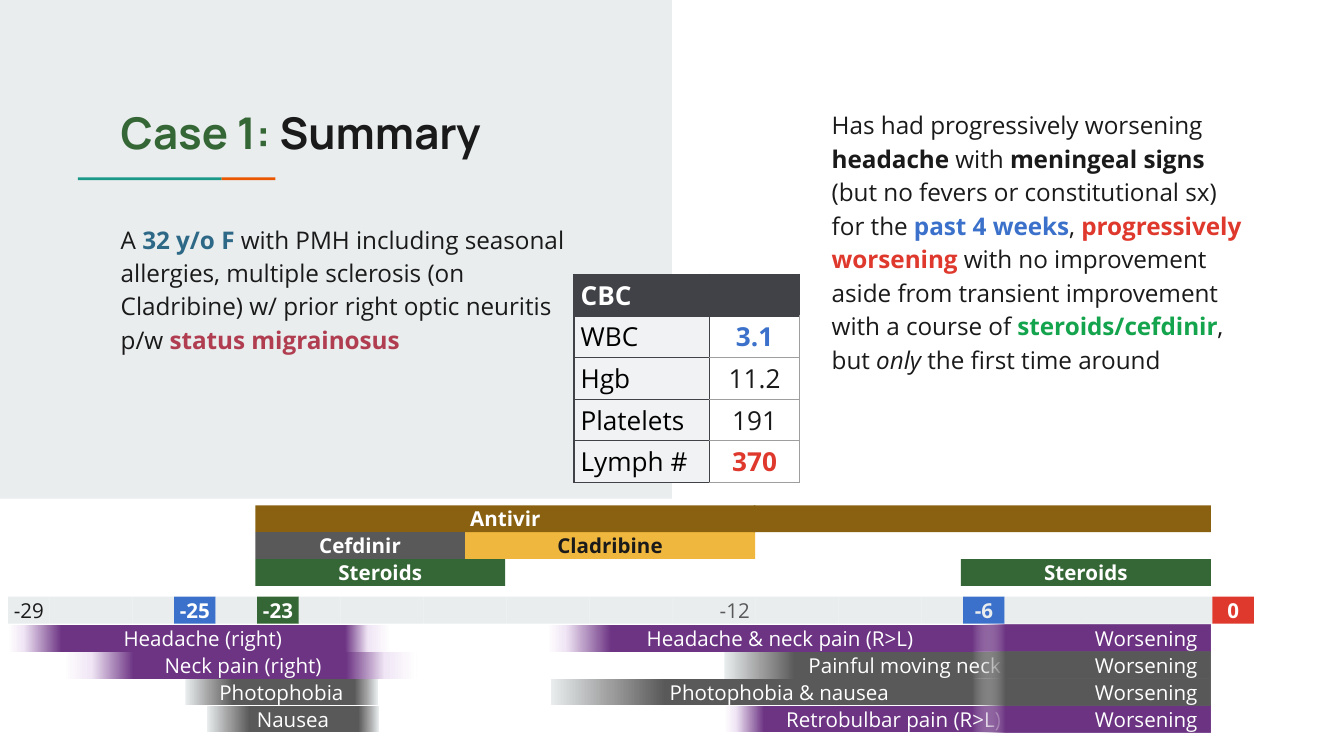
from dataclasses import dataclass
from typing import Optional

from lxml import etree
from pptx import Presentation
from pptx.dml.color import RGBColor
from pptx.enum import shapes, text
from pptx.oxml import ns
from pptx.util import Inches, Pt

WHITE = RGBColor(0xFF, 0xFF, 0xFF)
BLACK = RGBColor(0, 0, 0)
INK = RGBColor(0x1A, 0x1A, 0x1A)
MIST = RGBColor(0xE9, 0xED, 0xEE)
PALE = RGBColor(0xF1, 0xF2, 0xF3)
SLATE = RGBColor(0x40, 0x42, 0x47)
GRAY = RGBColor(0x59, 0x59, 0x59)
SILVER = RGBColor(0x9E, 0x9E, 0x9E)
LILAC = RGBColor(0xF0, 0xE6, 0xF5)
PURPLE = RGBColor(0x6C, 0x34, 0x83)
GREEN = RGBColor(0x35, 0x66, 0x35)
LIME = RGBColor(0x14, 0xA4, 0x4D)
BLUE = RGBColor(0x3B, 0x71, 0xCA)
STEEL = RGBColor(0x2D, 0x69, 0x87)
RED = RGBColor(0xDF, 0x38, 0x2C)
ROSE = RGBColor(0xB0, 0x3D, 0x50)
BROWN = RGBColor(0x89, 0x61, 0x10)
GOLD = RGBColor(0xEF, 0xB7, 0x3E)
TEAL = RGBColor(0x1A, 0x99, 0x88)
ORANGE = RGBColor(0xEB, 0x56, 0x00)

SANS = "Open Sans"
LEFT, MID, RIGHT = text.PP_ALIGN.LEFT, text.PP_ALIGN.CENTER, text.PP_ALIGN.RIGHT
WIDE = 10
TALL = WIDE * 9 / 16
ROW = 0.2
START, ZERO = 0.06, 9.02
DAY = (ZERO - START) / 29

# Gradient stops: (percent, colour), with None for a clear stop
P_IN = [(0, WHITE), (4, LILAC), (14, PURPLE), (100, PURPLE)]
P_BOTH = P_IN[:3] + [(88, PURPLE), (94, LILAC), (100, WHITE)]
P_SOFT = [(0, WHITE), (8, LILAC), (20, PURPLE), (80, PURPLE), (91, LILAC), (100, WHITE)]
P_CLEAR = [(0, None), (14, PURPLE), (100, PURPLE)]
G_IN = [(0, MIST), (13, SILVER), (25, GRAY), (100, GRAY)]
G_BOTH = G_IN[:3] + [(88, GRAY), (94, SILVER), (100, MIST)]
G_CLEAR = [(0, None), (14, GRAY), (100, GRAY)]


@dataclass
class Run:
    text: str
    color: RGBColor = INK
    bold: bool = False
    italic: bool = False


@dataclass
class Bar:
    x: float
    y: float
    w: float
    fill: object
    label: Optional[Run] = None
    align: object = MID
    pad: tuple = (0, 0)


def write(frame, runs: list, size=11, font=SANS, align=LEFT, line=None, after=None):
    para = frame.paragraphs[0]
    para.alignment = align
    if line:
        para.line_spacing = line
    if after:
        para.space_after = Pt(after)
    for item in runs:
        run = para.add_run()
        run.text = item.text
        face = run.font
        face.name, face.size = font, Pt(size)
        face.bold, face.italic = item.bold, item.italic
        face.color.rgb = item.color


def fade(shape, stops: list):
    """Fill from left to right with the given stops."""
    shape.fill.gradient()
    shape.fill.gradient_angle = 0
    root = shape.element.spPr.find(ns.qn("a:gradFill")).find(ns.qn("a:gsLst"))
    for old in list(root):
        root.remove(old)
    for pos, color in stops:
        stop = etree.SubElement(root, ns.qn("a:gs"), pos=str(pos * 1000))
        tint = etree.SubElement(stop, ns.qn("a:srgbClr"), val=str(color or WHITE))
        if color is None:
            etree.SubElement(tint, ns.qn("a:alpha"), val="0")


def block(slide, x: float, y: float, w: float, h: float, fill):
    shape = slide.shapes.add_shape(
        shapes.MSO_SHAPE.RECTANGLE, Inches(x), Inches(y), Inches(w), Inches(h))
    shape.shadow.inherit = False
    shape.line.fill.background()
    if isinstance(fill, list):
        fade(shape, fill)
    else:
        shape.fill.solid()
        shape.fill.fore_color.rgb = fill
    return shape


def draw(slide, bar: Bar):
    shape = block(slide, bar.x, bar.y, bar.w, ROW, bar.fill)
    if bar.label:
        frame = shape.text_frame
        frame.margin_left, frame.margin_right = map(Inches, bar.pad)
        frame.margin_top = frame.margin_bottom = 0
        frame.vertical_anchor = text.MSO_ANCHOR.MIDDLE
        write(frame, [bar.label], align=bar.align)


def note(slide, x: float, y: float, w: float, h: float, runs: list, **form):
    frame = slide.shapes.add_textbox(
        Inches(x), Inches(y), Inches(w), Inches(h)).text_frame
    frame.word_wrap = True
    frame.margin_left = frame.margin_right = Inches(0.1)
    frame.margin_top = frame.margin_bottom = Inches(0.1)
    write(frame, runs, **form)


def edge(cell, **sides):
    """Set cell borders; each side (L, R, T, B) is a colour and a width."""
    props = cell._tc.get_or_add_tcPr()
    for spot, side in enumerate("LRTB"):
        color, width = sides[side]
        line = etree.Element(ns.qn(f"a:ln{side}"), w=str(Pt(width)))
        fill = etree.SubElement(line, ns.qn("a:solidFill"))
        etree.SubElement(fill, ns.qn("a:srgbClr"), val=str(color))
        props.insert(spot, line)


def counts(slide):
    """Draw the blood count table."""
    rows = [(Run("CBC", WHITE, True), None),
            (Run("WBC", BLACK), Run("3.1", BLUE, True)),
            (Run("Hgb", BLACK), Run("11.2")),
            (Run("Platelets", BLACK), Run("191")),
            (Run("Lymph #", BLACK), Run("370", RED, True))]
    grid = slide.shapes.add_table(
        5, 2, Inches(4.27), Inches(2.04), Inches(1.68), Inches(1.55)).table
    grid.first_row = grid.horz_banding = False
    for col, wide in zip(grid.columns, (1.01, 0.67)):
        col.width = Inches(wide)
    for r, row in enumerate(rows):
        grid.rows[r].height = Inches(0.31)
        for c, item in enumerate(row):
            cell = grid.cell(r, c)
            cell.margin_left = Inches(0 if c else 0.05)
            cell.margin_right = cell.margin_top = cell.margin_bottom = 0
            cell.vertical_anchor = text.MSO_ANCHOR.MIDDLE
            if c and r:
                cell.fill.background()
            else:
                cell.fill.solid()
                cell.fill.fore_color.rgb = PALE if r else SLATE
            if item:
                write(cell.text_frame, [item], size=14, align=MID if c else LEFT)
            else:
                para = cell.text_frame.paragraphs[0]._p
                etree.SubElement(para, ns.qn("a:endParaRPr"), sz="1400")
            tone = SILVER if c and r else SLATE
            edge(cell, L=(SLATE, 0.75), R=(tone, 0.75),
                 T=(SLATE, 1.5) if r == 1 else (tone, 0.75),
                 B=(tone, 0.75 if r else 1.5))


def days(slide):
    """Draw the day scale from -29 to 0."""
    marks = {-29: (MIST, INK, False), -25: (BLUE, WHITE, True),
             -23: (GREEN, WHITE, True), -12: (MIST, GRAY, False),
             -6: (BLUE, MIST, True), 0: (RED, WHITE, True)}
    for day in range(-29, 1):
        fill, color, bold = marks.get(day, (MIST, None, False))
        label = Run(str(day), color, bold) if color else None
        draw(slide, Bar(ZERO + day * DAY, 4.44, 0.31, fill, label))


def main():
    deck = Presentation()
    deck.slide_width, deck.slide_height = Inches(WIDE), Inches(TALL)
    slide = deck.slides.add_slide(deck.slide_layouts[6])
    block(slide, 0, 0, WIDE / 2, TALL, MIST)
    block(slide, 0.58, 1.32, 1.07, 0.02, TEAL)
    block(slide, 1.65, 1.32, 0.4, 0.02, ORANGE)
    block(slide, 0, 3.71, WIDE, 1.93, WHITE)
    note(slide, 0.8, 1.54, 3.69, 1.74, [
        Run("A "), Run("32 y/o F ", STEEL, True),
        Run("with PMH including seasonal allergies, multiple sclerosis "
            "(on Cladribine) w/ prior right optic neuritis p/w "),
        Run("status migrainosus", ROSE, True)], size=13, line=1.15)
    note(slide, 0.8, 0.69, 4.12, 0.59,
         [Run("Case 1:", GREEN, True), Run(" Summary", INK, True)],
         size=23.4, font="Manrope")
    days(slide)
    y1, y2, y3, y4 = (4.65 + ROW * i for i in range(4))
    bars = [
        Bar(5.39, y4, 2.11, P_IN, Run("Retrobulbar pain (R>L)", WHITE), RIGHT, (0.05, 0.05)),
        Bar(5.39, y2, 2.11, G_IN, Run("Painful moving neck", WHITE), RIGHT, (0, 0.05)),
        Bar(3.46, 3.96, 2.16, GOLD, Run("Cladribine", INK, True)),
        Bar(5.61, 3.76, 3.4, BROWN),
        Bar(1.9, 3.76, 3.72, BROWN, Run("Antivir", WHITE, True)),
        Bar(4.07, y1, 3.42, P_IN, Run("Headache & neck pain (R>L)", WHITE), pad=(0.05, 0)),
        Bar(4.1, y3, 3.4, G_IN, Run("Photophobia & nausea", WHITE)),
        Bar(0.06, y1, 2.85, P_BOTH, Run("Headache (right)", WHITE), pad=(0.05, 0)),
        Bar(0.47, y2, 2.63, P_SOFT, Run("Neck pain (right)", WHITE), pad=(0.05, 0)),
        Bar(1.38, y3, 1.43, G_BOTH, Run("Photophobia", WHITE)),
        Bar(1.54, y4, 1.28, G_BOTH, Run("Nausea", WHITE)),
        Bar(1.9, 3.96, 1.56, GRAY, Run("Cefdinir", WHITE, True))]
    bars += [Bar(x, 4.16, 1.86, GREEN, Run("Steroids", WHITE, True)) for x in (1.9, 7.15)]
    bars += [Bar(7.24, y, 1.77, fill, Run("Worsening", WHITE), RIGHT, (0.05, 0.1))
             for y, fill in ((y1, P_CLEAR), (y4, P_CLEAR), (y2, G_CLEAR), (y3, G_CLEAR))]
    for bar in bars:
        draw(slide, bar)
    note(slide, 6.09, 0.69, 3.28, 2.18, [
        Run("Has had progressively worsening "), Run("headache ", bold=True),
        Run("with "), Run("meningeal signs", bold=True),
        Run(" (but no fevers or constitutional sx) for the "),
        Run("past 4 weeks", BLUE, True), Run(", "),
        Run("progressively worsening", RED, True),
        Run(" with no improvement aside from transient improvement with a course of "),
        Run("steroids/cefdinir", LIME, True), Run(", but "),
        Run("only", italic=True), Run(" the first time around")],
        size=13, line=1.15, after=12)
    counts(slide)
    deck.save("out.pptx")


if __name__ == "__main__":
    main()
